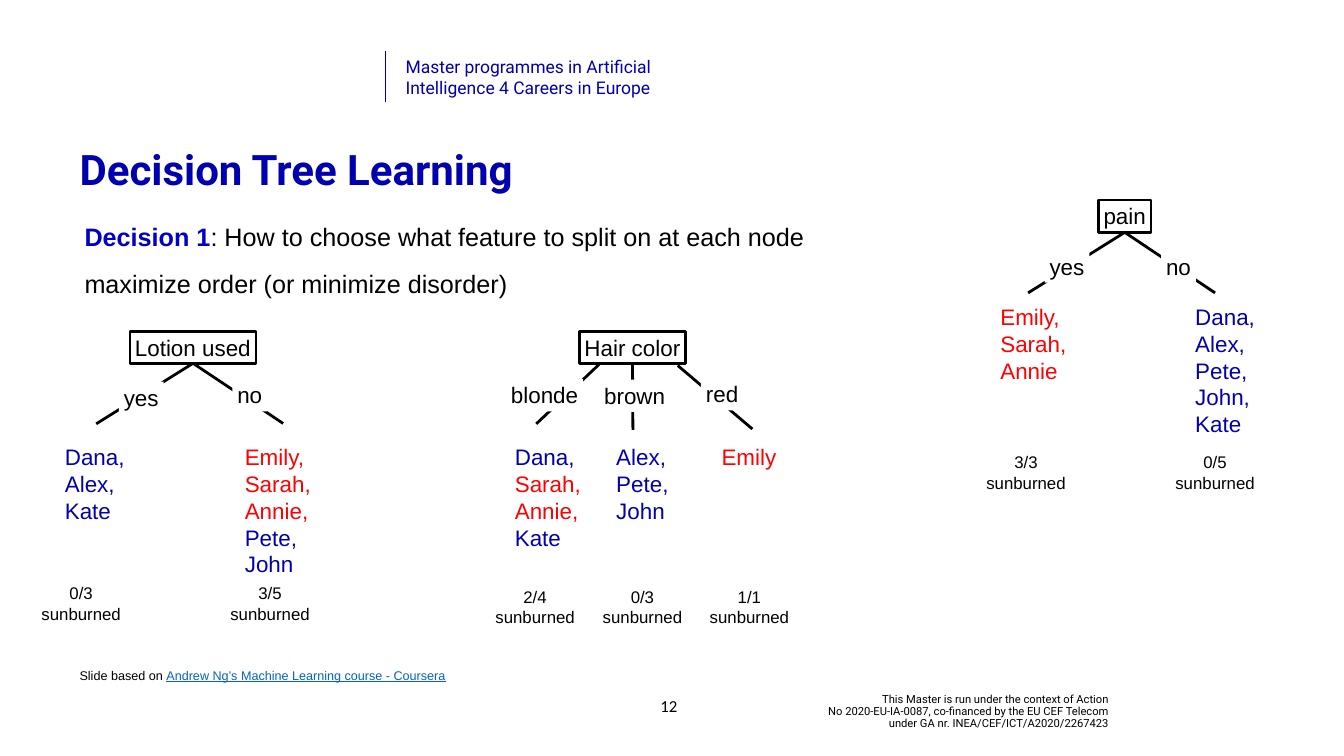
import dataclasses

import lxml.etree
import pptx
import pptx.dml.color
import pptx.enum.shapes
import pptx.enum.text
import pptx.oxml.ns
import pptx.util

Cm = pptx.util.Cm
Pt = pptx.util.Pt
ALIGN = pptx.enum.text.PP_ALIGN
ANCHOR = pptx.enum.text.MSO_ANCHOR

COLORS = {
    "navy": "0000B0",
    "blue": "0100C8",
    "red": "FF0000",
    "black": "000000",
    "white": "FFFFFF",
    "link": "0563C1",
}
SUNBURNED = {"Emily", "Sarah", "Annie"}
LABEL_HEIGHT = 1.63
ROW_HEIGHT = 1.36


@dataclasses.dataclass
class Branch:
    """One answer of a tree; start, end and answer_at are (x, y) in cm."""
    answer: str
    answer_at: tuple
    answer_width: float
    start: tuple
    end: tuple
    names: list
    names_left: float
    names_width: float
    share_left: float


@dataclasses.dataclass
class Tree:
    feature: str
    left: float
    top: float
    width: float
    names_top: float
    share_top: float
    branches: list


TREES = [
    Tree("pain", 55.37, 10.08, 2.64, 15.14, 22.66, [
        Branch("yes", (52.65, 12.62), 2.26, (56.69, 11.71), (51.82, 14.76),
               ["Emily", "Sarah", "Annie"], 50.17, 3.84, 49.45),
        Branch("no", (58.52, 12.62), 1.75, (56.69, 11.71), (61.24, 14.76),
               ["Dana", "Alex", "Pete", "John", "Kate"], 59.99, 3.53, 58.98),
    ]),
    Tree("Lotion used", 6.55, 16.69, 6.35, 22.2, 29.26, [
        Branch("yes", (5.99, 19.23), 2.26, (9.73, 18.31), (4.85, 21.36),
               ["Dana", "Alex", "Kate"], 3.02, 3.53, 1.83),
        Branch("no", (11.71, 19.1), 1.75, (9.73, 18.31), (14.27, 21.34),
               ["Emily", "Sarah", "Annie", "Pete", "John"], 12.09, 3.84, 11.35),
    ]),
    Tree("Hair color", 29.21, 16.69, 5.33, 22.2, 29.46, [
        Branch("blonde", (25.5, 19.1), 3.89, (30.2, 18.36), (27.03, 21.36),
               ["Dana", "Sarah", "Annie", "Kate"], 25.7, 3.84, 24.71),
        Branch("brown", (30.2, 19.13), 3.58, (31.88, 18.31), (31.9, 21.67),
               ["Alex", "Pete", "John"], 30.81, 3.15, 30.12),
        Branch("red", (35.33, 19.05), 2.13, (34.16, 18.42), (37.92, 21.62),
               ["Emily"], 36.12, 3.28, 35.51),
    ]),
]


def rgb(name):
    return pptx.dml.color.RGBColor.from_string(COLORS[name])


def write(box, paragraphs, *, size, font="Arial", color="black", bold=False,
          align=ALIGN.LEFT, anchor=ANCHOR.TOP, spacing=None):
    """Fill a box; each paragraph is a string or a list of (text, changes)."""
    frame = box.text_frame
    frame.word_wrap = True
    frame.vertical_anchor = anchor
    for index, content in enumerate(paragraphs):
        para = frame.add_paragraph() if index else frame.paragraphs[0]
        para.alignment = align
        if spacing:
            para.line_spacing = spacing
        spans = [(content, {})] if isinstance(content, str) else content
        for text, changes in spans:
            for number, line in enumerate(text.split("\n")):
                if number:
                    para.add_line_break()
                span = para.add_run()
                span.text = line
                span.font.name = font
                span.font.size = Pt(size)
                span.font.bold = changes.get("bold", bold)
                span.font.underline = changes.get("underline")
                span.font.color.rgb = rgb(changes.get("color", color))


def add_text(page, left, top, width, height, paragraphs, **style):
    box = page.shapes.add_textbox(Cm(left), Cm(top), Cm(width), Cm(height))
    write(box, paragraphs, **style)


def add_label(shapes, left, top, width, height, paragraphs, *, framed=False,
              size=32, align=ALIGN.LEFT):
    """Add a tree box: outlined when framed, otherwise plain white."""
    box = shapes.add_shape(pptx.enum.shapes.MSO_SHAPE.RECTANGLE,
                           Cm(left), Cm(top), Cm(width), Cm(height))
    box.shadow.inherit = False
    if framed:
        box.fill.background()
        box.line.color.rgb = rgb("black")
        box.line.width = Pt(4)
    else:
        box.fill.solid()
        box.fill.fore_color.rgb = rgb("white")
        box.line.fill.background()
    # The boxes fit their words tightly, so the spare insets go to the text.
    box.text_frame.margin_right = 0
    if align == ALIGN.CENTER:
        box.text_frame.margin_left = 0
    write(box, paragraphs, size=size, align=align)


def add_line(shapes, start, end, color="black", width=4):
    line = shapes.add_connector(pptx.enum.shapes.MSO_CONNECTOR.STRAIGHT,
                                *map(Cm, start + end))
    line.line.color.rgb = rgb(color)
    line.line.width = Pt(width)
    properties = line._element.spPr
    lxml.etree.SubElement(properties, pptx.oxml.ns.qn("a:effectLst"))


def name_rows(names):
    """One paragraph per name, red for the sunburned, commas between."""
    rows = []
    for name in names:
        comma = "" if name == names[-1] else ","
        color = "red" if name in SUNBURNED else "navy"
        rows.append([(name + comma, {"color": color})])
    return rows


def add_tree(page, tree):
    shapes = page.shapes.add_group_shape().shapes
    add_label(shapes, tree.left, tree.top, tree.width, LABEL_HEIGHT,
              [tree.feature], framed=True)
    for branch in tree.branches:
        add_line(shapes, branch.start, branch.end)
    for branch in tree.branches:
        names = branch.names
        burned = len(SUNBURNED.intersection(names))
        add_label(shapes, *branch.answer_at, branch.answer_width, LABEL_HEIGHT,
                  [branch.answer])
        add_label(shapes, branch.names_left, tree.names_top, branch.names_width,
                  LABEL_HEIGHT + ROW_HEIGHT * (len(names) - 1), name_rows(names))
        add_label(shapes, branch.share_left, tree.share_top, 4.52, 2.31,
                  [f"{burned}/{len(names)}", "sunburned"], size=24,
                  align=ALIGN.CENTER)


def add_header_and_footer(page):
    add_line(page.shapes, (19.43, 2.57), (19.43, 5.16), "navy", 0.5)
    add_text(page, 20.19, 2.69, 16.18, 2.39,
             ["Master programmes in Artificial\nIntelligence 4 Careers in Europe"],
             size=25, font="Roboto", color="navy")
    add_text(page, 38.15, 34.9, 17.98, 1.93,
             ["This Master is run under the context of Action\n"
              "No 2020-EU-IA-0087, co-financed by the EU CEF Telecom\n"
              "under GA nr. INEA/CEF/ICT/A2020/2267423"],
             size=16, font="Roboto", align=ALIGN.RIGHT, anchor=ANCHOR.MIDDLE,
             spacing=0.9)
    add_text(page, 32.31, 34.57, 2.82, 2.03, ["12"], size=24, font="Calibri",
             align=ALIGN.CENTER, anchor=ANCHOR.MIDDLE)


def main():
    deck = pptx.Presentation()
    deck.slide_width, deck.slide_height = Cm(67.74), Cm(38.1)
    page = deck.slides.add_slide(deck.slide_layouts[6])
    add_header_and_footer(page)
    add_text(page, 3.76, 7.19, 59.97, 5.82, ["Decision Tree Learning"], size=60,
             font="Roboto", color="navy", bold=True, spacing=Pt(70))
    add_text(page, 4.01, 11.02, 46.48, 1.8,
             [[("Decision 1", {"bold": True, "color": "blue"}),
               (": How to choose what feature to split on at each node", {})]],
             size=36)
    add_text(page, 4.01, 13.41, 46.48, 1.8,
             ["maximize order (or minimize disorder)"], size=36)
    for tree in TREES:
        add_tree(page, tree)
    add_text(page, 3.76, 33.53, 46.48, 1.02,
             [[("Slide based on ", {}),
               ("Andrew Ng’s Machine Learning course - Coursera",
                {"color": "link", "underline": True})]], size=18)
    deck.save("out.pptx")


if __name__ == "__main__":
    main()
